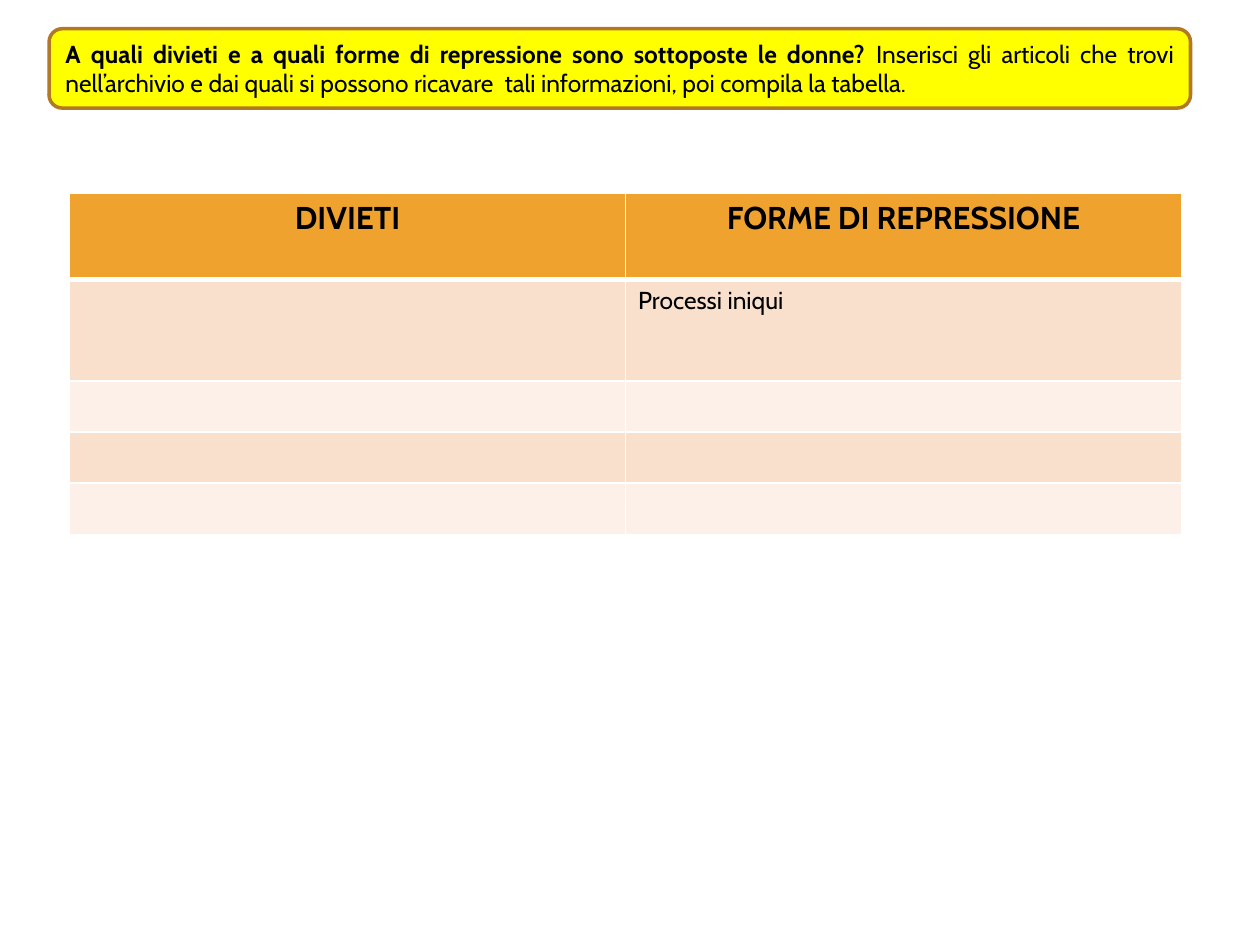
from dataclasses import dataclass

import pptx
import pptx.dml.color
import pptx.enum.shapes
import pptx.enum.text
import pptx.oxml
import pptx.oxml.ns
import pptx.util
from pptx.util import Cm

Align = pptx.enum.text.PP_ALIGN


@dataclass(frozen=True)
class Theme:
    font: str = "Cabin"
    text: str = "000000"
    prompt_fill: str = "FFFF00"
    prompt_line: str = "B27822"
    header_fill: str = "F0A22E"
    bands: tuple[str, str] = ("F9E0CD", "FCF0E8")
    border: str = "FFFFFF"
    body_size: int = 14
    header_size: int = 18
    thin_border: int = 1
    thick_border: int = 3


@dataclass(frozen=True)
class Row:
    texts: tuple[str, str]
    height: float
    header: bool = False


THEME = Theme()
ROWS = [
    Row(("DIVIETI", "FORME DI REPRESSIONE"), 1.75, header=True),
    Row(("", "Processi iniqui"), 2.04),
    *[Row(("", ""), 1.03)] * 3,
]
QUESTION = "A quali divieti e a quali forme di repressione sono sottoposte le donne? "
INSTRUCTION = (
    "Inserisci gli articoli che trovi nell’archivio e dai quali si possono "
    "ricavare  tali informazioni, poi compila la tabella."
)


def color(value: str) -> pptx.dml.color.RGBColor:
    return pptx.dml.color.RGBColor.from_string(value)


def format_run(run, size: int, bold: bool) -> None:
    run.font.name = THEME.font
    run.font.size = pptx.util.Pt(size)
    run.font.bold = bold
    run.font.color.rgb = color(THEME.text)


def add_prompt(slide) -> None:
    shape = slide.shapes.add_shape(
        pptx.enum.shapes.MSO_SHAPE.ROUNDED_RECTANGLE,
        Cm(0.99), Cm(0.58), Cm(23.01), Cm(1.6),
    )
    shape.shadow.inherit = False
    shape.fill.solid()
    shape.fill.fore_color.rgb = color(THEME.prompt_fill)
    shape.line.color.rgb = color(THEME.prompt_line)
    shape.line.width = pptx.util.Pt(2)
    shape.text_frame.word_wrap = True
    shape.text_frame.vertical_anchor = pptx.enum.text.MSO_ANCHOR.MIDDLE
    paragraph = shape.text_frame.paragraphs[0]
    paragraph.alignment = Align.JUSTIFY
    for text, bold in ((QUESTION, True), (INSTRUCTION, False)):
        run = paragraph.add_run()
        run.text = text
        format_run(run, THEME.body_size, bold)


def add_border(cell, side: str, width: int) -> None:
    line = pptx.oxml.parse_xml(
        f'<a:ln{side} {pptx.oxml.ns.nsdecls("a")} w="{pptx.util.Pt(width)}">'
        f'<a:solidFill><a:srgbClr val="{THEME.border}"/></a:solidFill></a:ln{side}>'
    )
    cell._tc.get_or_add_tcPr().append(line)


def fill_cell(cell, text: str, row_index: int, header: bool) -> None:
    for side in "LRTB":
        below_header = (row_index, side) in ((0, "B"), (1, "T"))
        add_border(cell, side, THEME.thick_border if below_header else THEME.thin_border)
    cell.fill.solid()
    band = THEME.bands[(row_index - 1) % 2]
    cell.fill.fore_color.rgb = color(THEME.header_fill if header else band)
    if text:
        paragraph = cell.text_frame.paragraphs[0]
        paragraph.text = text
        paragraph.alignment = Align.CENTER if header else Align.JUSTIFY
        size = THEME.header_size if header else THEME.body_size
        format_run(paragraph.runs[0], size, header)


def add_answer_table(slide, rows: list[Row]) -> None:
    height = Cm(sum(row.height for row in rows))
    table = slide.shapes.add_table(
        len(rows), 2, Cm(1.4), Cm(3.89), Cm(22.42), height
    ).table
    for row_index, row in enumerate(rows):
        table.rows[row_index].height = Cm(row.height)
        for column_index, text in enumerate(row.texts):
            fill_cell(table.cell(row_index, column_index), text, row_index, row.header)


def main() -> None:
    presentation = pptx.Presentation()
    presentation.slide_width = Cm(25.4)
    presentation.slide_height = Cm(19.05)
    slide = presentation.slides.add_slide(presentation.slide_layouts[6])
    add_prompt(slide)
    add_answer_table(slide, ROWS)
    presentation.save("out.pptx")


if __name__ == "__main__":
    main()
